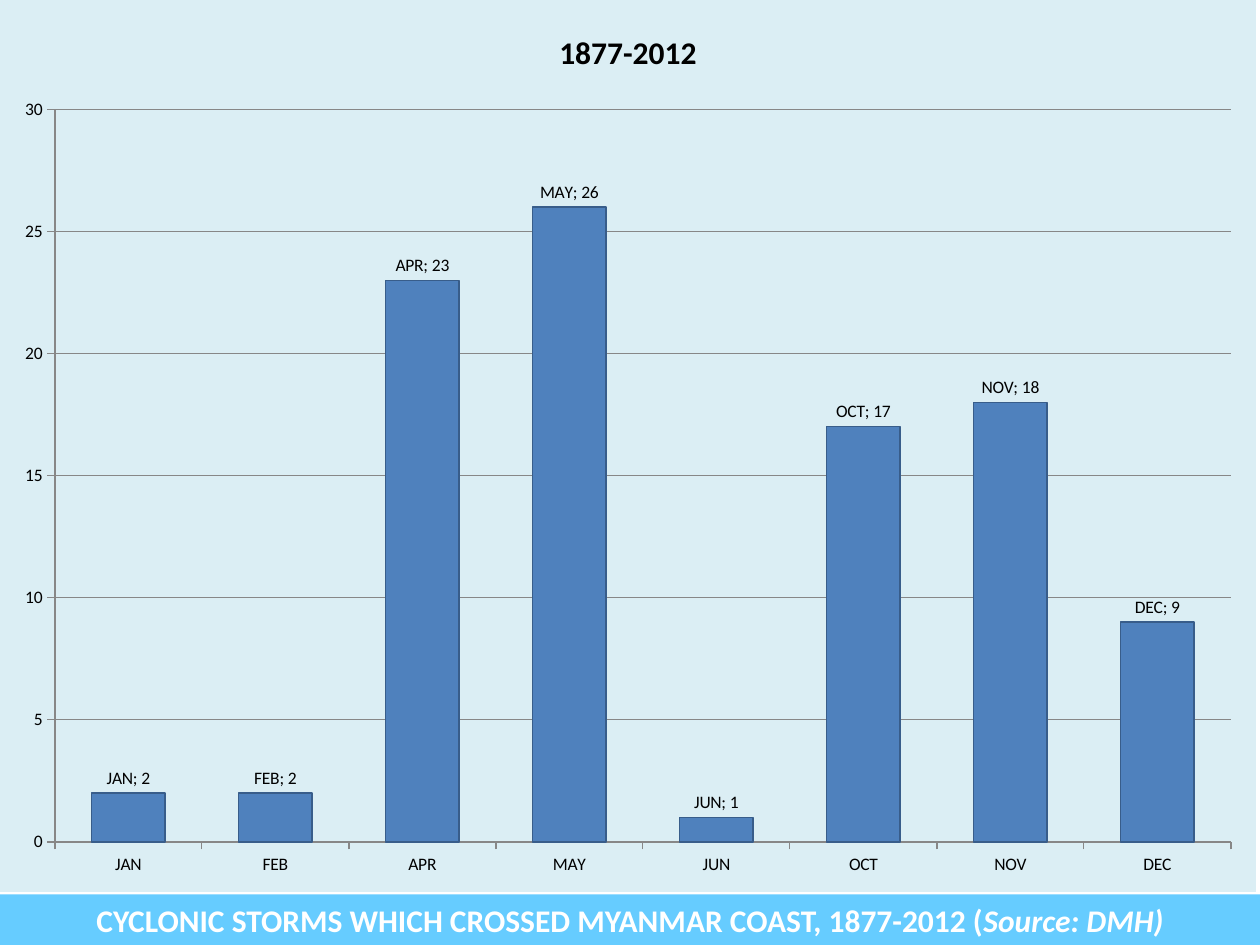
from dataclasses import dataclass

from lxml.etree import SubElement
from pptx import Presentation
from pptx.chart.data import CategoryChartData
from pptx.dml.color import RGBColor
from pptx.enum.chart import XL_CHART_TYPE, XL_LABEL_POSITION, XL_TICK_MARK
from pptx.enum.shapes import MSO_SHAPE
from pptx.enum.text import MSO_ANCHOR, MSO_AUTO_SIZE, PP_ALIGN
from pptx.oxml import parse_xml
from pptx.oxml.ns import nsdecls, qn
from pptx.util import Cm, Pt


@dataclass
class Theme:
    font: str = "Calibri"
    back: str = "DBEEF4"
    bar: str = "4F81BD"
    edge: str = "385D8A"
    grid: str = "878787"
    band: str = "66CCFF"
    ink: str = "000000"
    white: str = "FFFFFF"
    head: int = 18
    small: int = 10


theme = Theme()


def add_run(para, text, color, slant=False):
    run = para.add_run()
    run.text = text
    font = run.font
    font.name, font.size = theme.font, Pt(theme.head)
    font.bold, font.italic = True, slant
    font.color.rgb = RGBColor.from_string(color)


def set_line(line, color):
    line.color.rgb = RGBColor.from_string(color)
    line.width = Pt(0.75)


deck = Presentation()
deck.slide_width, deck.slide_height = Cm(25.4), Cm(19.05)
slide = deck.slides.add_slide(deck.slide_layouts[6])

# Caption band
band = slide.shapes.add_shape(MSO_SHAPE.RECTANGLE, 0, Cm(18.03), deck.slide_width, Cm(1.02))
band.shadow.inherit = False
band.fill.solid()
band.fill.fore_color.rgb = RGBColor.from_string(theme.band)
band.line.fill.background()
frame = band.text_frame
frame.word_wrap = True
frame.auto_size = MSO_AUTO_SIZE.SHAPE_TO_FIT_TEXT
frame.vertical_anchor = MSO_ANCHOR.MIDDLE
para = frame.paragraphs[0]
para.alignment = PP_ALIGN.CENTER
add_run(para, "CYCLONIC STORMS WHICH CROSSED MYANMAR COAST, 1877-2012 (", theme.white)
add_run(para, "Source: DMH)", theme.white, slant=True)

# Storms by month
storms = {"JAN": 2, "FEB": 2, "APR": 23, "MAY": 26,
          "JUN": 1, "OCT": 17, "NOV": 18, "DEC": 9}
data = CategoryChartData(number_format="0")
data.categories = list(storms)
data.add_series("1877-2012", list(storms.values()))
chart = slide.shapes.add_chart(
    XL_CHART_TYPE.COLUMN_CLUSTERED, 0, 0, Cm(25.32), Cm(17.98), data).chart
chart.has_legend = False
chart.font.name, chart.font.size = theme.font, Pt(theme.small)
chart.font.color.rgb = RGBColor.from_string(theme.ink)

# Chart title and ground
chart.has_title = True
title = chart.chart_title
title.include_in_layout = False
add_run(title.text_frame.paragraphs[0], "1877-2012", theme.ink)
ground = parse_xml(
    f'<c:spPr {nsdecls("c", "a")}><a:solidFill><a:srgbClr val="{theme.back}"/>'
    '</a:solidFill><a:ln><a:noFill/></a:ln></c:spPr>')
chart._chartSpace.find(qn("c:chart")).addnext(ground)

# Axes
months, count = chart.category_axis, chart.value_axis
for axis in (months, count):
    axis.major_tick_mark = XL_TICK_MARK.OUTSIDE
    axis.minor_tick_mark = XL_TICK_MARK.NONE
    set_line(axis.format.line, theme.grid)
count.minimum_scale, count.maximum_scale, count.major_unit = 0, 30, 5
count.has_major_gridlines = True
set_line(count.major_gridlines.format.line, theme.grid)
count.tick_labels.number_format = "0"
count.tick_labels.number_format_is_linked = False

# Bars
plot = chart.plots[0]
plot.gap_width = 100
plot.vary_by_categories = False
bars = plot.series[0]
bars.format.fill.solid()
bars.format.fill.fore_color.rgb = RGBColor.from_string(theme.bar)
set_line(bars.format.line, theme.edge)

# Bar labels
labels = bars.data_labels
labels.show_value = labels.show_category_name = True
labels.position = XL_LABEL_POSITION.OUTSIDE_END
labels.number_format = "0"
labels.number_format_is_linked = False
root = labels._element
mark = SubElement(root, qn("c:separator"))
mark.text = "; "
root.find(qn("c:showBubbleSize")).addnext(mark)

deck.save("out.pptx")
